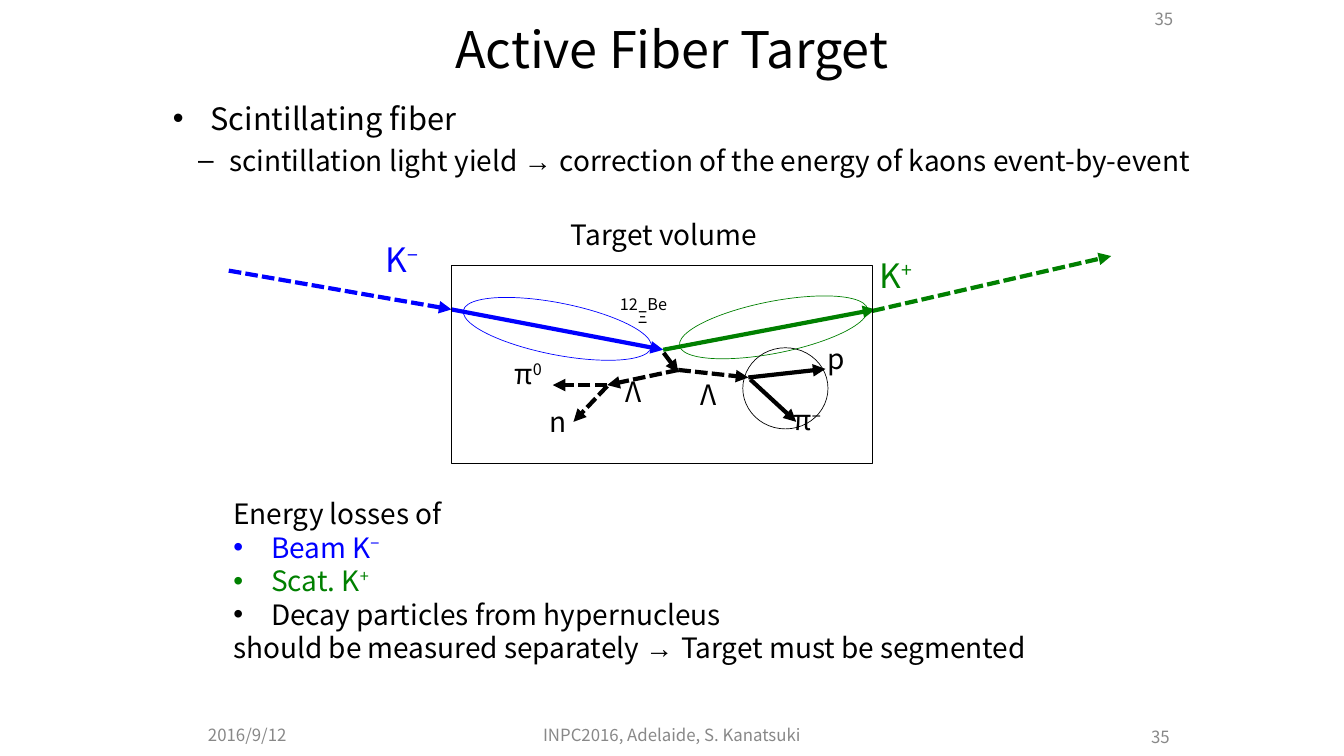
from pptx import Presentation
from pptx.dml.color import RGBColor
from pptx.enum.dml import MSO_LINE
from pptx.enum.shapes import MSO_CONNECTOR, MSO_SHAPE
from pptx.enum.text import MSO_ANCHOR, MSO_AUTO_SIZE, PP_ALIGN
from pptx.oxml.ns import qn
from pptx.util import Inches, Pt
from lxml.etree import SubElement

FONT = "Noto Sans CJK JP"
BLACK, GRAY, BLUE, GREEN = "000000", "888888", "0000FF", "008000"
ARROW = ("→ ", {"font": "Arial"})
SUPER = {"base": 31}
SUB = {"base": -16}


def paint(color_format, color):
    color_format.rgb = RGBColor.from_string(color)


def add_span(para, text, size=40, color=BLACK, font=FONT, base=0):
    span = para.add_run()
    span.text = text
    span.font.size = Pt(size)
    span.font.name = font
    paint(span.font.color, color)
    properties = span.font._element
    SubElement(properties, qn("a:ea")).set("typeface", font)
    if base:
        properties.set("baseline", str(base * 1000))


def write(para, spans, align=PP_ALIGN.LEFT, **style):
    para.alignment = align
    for text, changes in spans:
        add_span(para, text, **{**style, **changes})


def set_bullet(para, symbol, margin, indent):
    properties = para._p.get_or_add_pPr()
    properties.set("marL", str(Inches(margin)))
    properties.set("indent", str(Inches(-indent)))
    SubElement(properties, qn("a:buFont")).set("typeface", "Arial")
    SubElement(properties, qn("a:buChar")).set("char", symbol)


def set_frame(shape, place, inset, anchor=MSO_ANCHOR.TOP, wrap=True):
    shape.left, shape.top, shape.width, shape.height = map(Inches, place)
    frame = shape.text_frame
    frame.margin_left = frame.margin_right = Inches(inset)
    frame.margin_top = frame.margin_bottom = Inches(inset)
    frame.vertical_anchor = anchor
    frame.word_wrap = wrap
    frame.auto_size = MSO_AUTO_SIZE.NONE
    return frame


def add_text(page, place, spans, inset=0, anchor=MSO_ANCHOR.TOP, wrap=True, **style):
    box = page.shapes.add_textbox(*map(Inches, place))
    frame = set_frame(box, place, inset, anchor, wrap)
    write(frame.paragraphs[0], spans, **style)
    return frame


def add_arrow(page, start, end, color=BLACK, dashed=False):
    arrow = page.shapes.add_connector(MSO_CONNECTOR.STRAIGHT, *map(Inches, start + end))
    paint(arrow.line.color, color)
    arrow.line.width = Pt(6)
    if dashed:
        arrow.line.dash_style = MSO_LINE.SQUARE_DOT
    SubElement(arrow.line._get_or_add_ln(), qn("a:tailEnd")).set("type", "triangle")
    SubElement(arrow._element.spPr, qn("a:effectLst"))


def add_outline(page, kind, place, color=BLACK, rotation=0):
    outline = page.shapes.add_shape(kind, *map(Inches, place))
    outline.shadow.inherit = False
    outline.fill.background()
    paint(outline.line.color, color)
    outline.line.width = Pt(1)
    outline.rotation = rotation


def add_heading(page):
    title, body = page.placeholders
    frame = set_frame(title, (4.33, 0.02, 18, 1.86), 0.1, MSO_ANCHOR.MIDDLE)
    write(frame.paragraphs[0], [("Active Fiber Target", {})], PP_ALIGN.CENTER, size=72)

    frame = set_frame(body, (3.33, 1.88, 23.33, 11.8), 0.1)
    para = frame.paragraphs[0]
    para.space_before = Pt(10)
    set_bullet(para, "•", 0.75, 0.75)
    write(para, [("Scintillating fiber", {})], size=44)
    para = frame.add_paragraph()
    para.level = 1
    para.space_before = Pt(9)
    set_bullet(para, "–", 1.12, 0.62)
    write(para, [("scintillation light yield ", {}), ARROW,
                 ("correction of the energy of kaons event-by-event", {})])


def add_footers(page):
    footers = [
        ("INPC2016, Adelaide, S. Kanatsuki", (8.85, 14.32, 8.96, 0.53), PP_ALIGN.CENTER),
        ("35", (22.73, 0.1, 0.65, 0.53), PP_ALIGN.RIGHT),
        ("2016/9/12", (3.32, 14.32, 3.17, 0.53), PP_ALIGN.CENTER),
        ("35", (22.33, 14.35, 0.98, 0.53), PP_ALIGN.RIGHT),
    ]
    for text, place, align in footers:
        add_text(page, place, [(text, {})], inset=0.1, anchor=MSO_ANCHOR.MIDDLE,
                 wrap=len(text) > 2, align=align, size=24, color=GRAY)


def add_summary(page):
    frame = add_text(page, (4.63, 9.85, 17.5, 3.94), [("Energy losses of", {})])
    losses = [
        ([("Beam K", {}), ("−", SUPER)], BLUE),
        ([("Scat. K", {}), ("+", SUPER)], GREEN),
        ([("Decay particles from hypernucleus", {})], BLACK),
    ]
    for spans, color in losses:
        para = frame.add_paragraph()
        set_bullet(para, "•", 0.75, 0.75)
        write(para, spans, color=color)
    write(frame.add_paragraph(), [("should be measured separately ", {}), ARROW,
                                  ("Target must be segmented", {})])


def add_reaction(page):
    entry, vertex, hypernucleus = (8.96, 6.14), (13.16, 6.94), (13.46, 7.34)
    left_decay, right_decay = (12.05, 7.64), (14.85, 7.49)

    add_arrow(page, (4.54, 5.37), entry, BLUE, dashed=True)
    add_arrow(page, entry, vertex, BLUE)
    add_arrow(page, vertex, (17.37, 6.14), GREEN)
    add_arrow(page, (17.31, 6.17), (22.05, 5.08), GREEN, dashed=True)
    add_outline(page, MSO_SHAPE.RECTANGLE, (8.95, 5.26, 8.37, 3.94))

    decays = [
        (hypernucleus, right_decay, True),
        (hypernucleus, left_decay, True),
        ((13.17, 7), (13.46, 7.39), True),
        ((14.89, 7.53), (15.8, 8.37), False),
        (right_decay, (16.38, 7.32), False),
        (left_decay, (10.97, 7.64), True),
        ((12.05, 7.66), (11.38, 8.37), True),
    ]
    for start, end, dashed in decays:
        add_arrow(page, start, end, dashed=dashed)

    add_outline(page, MSO_SHAPE.OVAL, (9.16, 6.01, 3.8, 1.03), BLUE, 11.1)
    add_outline(page, MSO_SHAPE.OVAL, (13.45, 5.98, 3.8, 1.03), GREEN, 348.9)
    add_outline(page, MSO_SHAPE.OVAL, (14.74, 6.9, 1.69, 1.61))


def add_labels(page):
    particles = [
        ("Λ", "", 12.42, 7.44),
        ("Λ", "", 13.91, 7.49),
        ("π", "0", 10.21, 7.07),
        ("n", "", 10.9, 8.02),
        ("p", "", 16.43, 6.78),
        ("π", "−", 15.75, 7.99),
    ]
    for name, charge, left, top in particles:
        spans = [(name, {})] + ([(charge, SUPER)] if charge else [])
        add_text(page, (left, top, 0.91, 0.56), spans)

    for charge, left, top, color in [("+", 17.46, 5.05, GREEN), ("−", 7.65, 4.75, BLUE)]:
        add_text(page, (left, top, 1.7, 0.67), [("K", {}), (charge, SUPER)],
                 size=48, color=color)

    add_text(page, (11.33, 4.32, 4.72, 0.56), [("Target volume", {})])
    add_text(page, (12.3, 5.78, 1.7, 0.61), [("12", SUPER), ("Ξ", SUB), ("Be", SUPER)])


def main():
    deck = Presentation()
    deck.slide_width, deck.slide_height = Inches(26.67), Inches(15)
    page = deck.slides.add_slide(deck.slide_layouts[1])
    add_heading(page)
    add_footers(page)
    add_summary(page)
    add_reaction(page)
    add_labels(page)
    deck.save("out.pptx")


if __name__ == "__main__":
    main()
